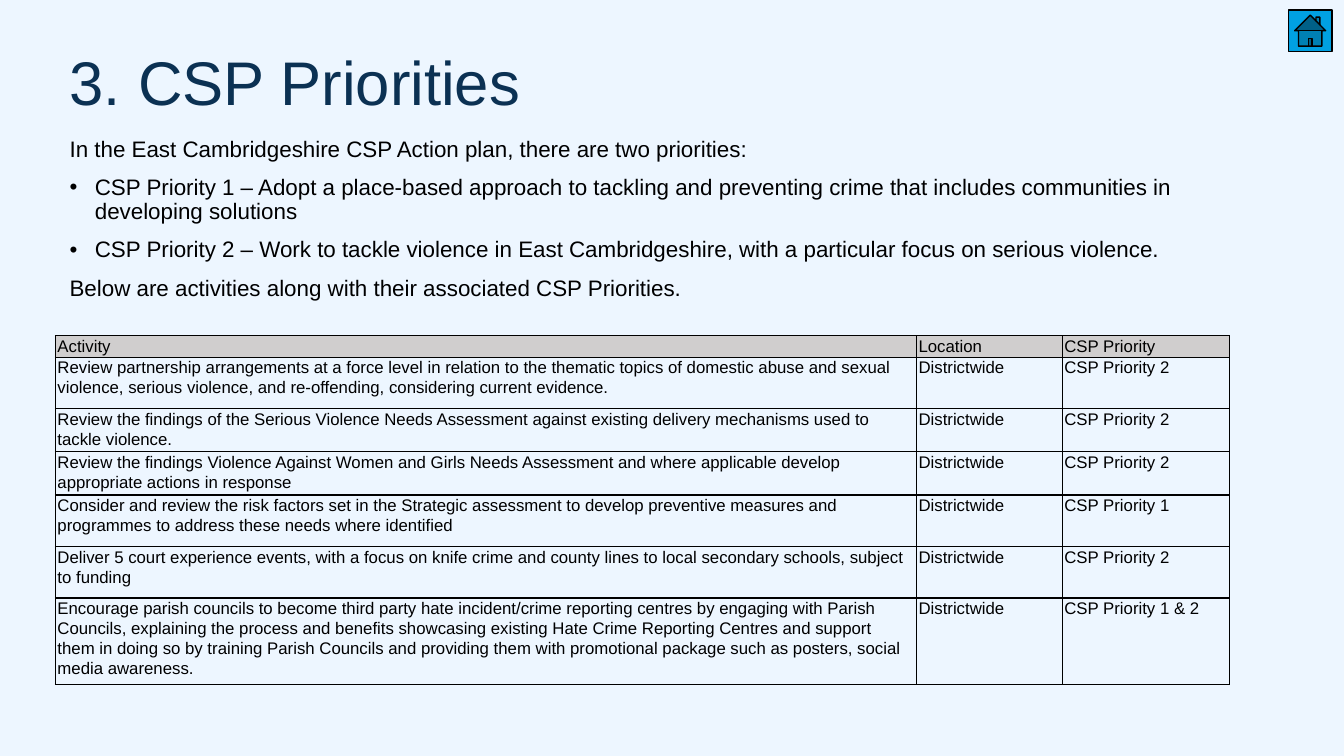
from dataclasses import dataclass

from lxml.etree import SubElement
from pptx import Presentation
from pptx.dml.color import RGBColor
from pptx.enum.shapes import MSO_SHAPE as Preset
from pptx.enum.text import MSO_ANCHOR as Anchor
from pptx.oxml.ns import qn
from pptx.util import Emu, Inches, Pt

FONT = "Arial"
INK, NAVY, PALE, SKY, GREY = "000000", "0B3153", "EDF6FF", "00A0E2", "D0CECE"
SLIDE_W, SLIDE_H = Inches(13.33), Inches(7.5)
LINE_SHARE, SPARE_SHARE = 2.67, 1.47
COLUMN_SHARES = (64.07, 10.85, 12.45)


@dataclass(frozen=True)
class Area:
    left: float
    top: float
    width: float
    height: float

    def box(self) -> tuple[Emu, Emu, Emu, Emu]:
        return across(self.left), down(self.top), across(self.width), down(self.height)


@dataclass(frozen=True)
class Statement:
    text: str
    bulleted: bool = False


@dataclass(frozen=True)
class Activity:
    name: str
    location: str
    priority: str
    lines: int = 2
    spare: bool = False
    fill: str | None = None

    def height(self) -> Emu:
        return down(self.lines * LINE_SHARE + self.spare * SPARE_SHARE)


TITLE_AREA = Area(5.18, 6.93, 86.27, 17.73)
HOME_AREA = Area(95.87, 1.33, 3.23, 5.47)
INTRO_AREA = Area(5.18, 18.27, 86.27, 23.47)
TABLE_AREA = Area(4.13, 44.4, sum(COLUMN_SHARES), 44.4)

TITLE = [Statement("3. CSP Priorities")]
INTRO = [
    Statement("In the East Cambridgeshire CSP Action plan, there are two priorities:"),
    Statement("CSP Priority 1 – Adopt a place-based approach to tackling and preventing crime "
              "that includes communities in developing solutions", True),
    Statement("CSP Priority 2 – Work to tackle violence in East Cambridgeshire, "
              "with a particular focus on serious violence.", True),
    Statement("Below are activities along with their associated CSP Priorities."),
]
ACTIVITIES = [
    Activity("Activity", "Location", "CSP Priority", lines=1, fill=GREY),
    Activity("Review partnership arrangements at a force level in relation to the thematic topics of "
             "domestic abuse and sexual violence, serious violence, and re-offending, "
             "considering current evidence.", "Districtwide", "CSP Priority 2", spare=True),
    Activity("Review the findings of the Serious Violence Needs Assessment against existing "
             "delivery mechanisms used to tackle violence.", "Districtwide", "CSP Priority 2"),
    Activity("Review the findings Violence Against Women and Girls Needs Assessment and where "
             "applicable develop appropriate actions in response", "Districtwide", "CSP Priority 2"),
    Activity("Consider and review the risk factors set in the Strategic assessment to develop "
             "preventive measures and programmes to address these needs where identified",
             "Districtwide", "CSP Priority 1", spare=True),
    Activity("Deliver 5 court experience events, with a focus on knife crime and county lines to "
             "local secondary schools, subject to funding", "Districtwide", "CSP Priority 2", spare=True),
    Activity("Encourage parish councils to become third party hate incident/crime reporting centres "
             "by engaging with Parish Councils, explaining the process and benefits showcasing "
             "existing Hate Crime Reporting Centres and support them in doing so by training Parish "
             "Councils and providing them with promotional package such as posters, social media "
             "awareness.", "Districtwide", "CSP Priority 1 & 2", lines=4),
]


def across(share: float) -> Emu:
    return Emu(round(SLIDE_W * share / 100))


def down(share: float) -> Emu:
    return Emu(round(SLIDE_H * share / 100))


def paint(fill, color: str) -> None:
    fill.solid()
    fill.fore_color.rgb = RGBColor.from_string(color)


def write(paragraph, text: str, size: float, color: str, spacing: float) -> None:
    paragraph.text = text
    paragraph.line_spacing = spacing
    for run in paragraph.runs:
        run.font.name = FONT
        run.font.size = Pt(size)
        run.font.color.rgb = RGBColor.from_string(color)


def add_bullet(paragraph) -> None:
    props = paragraph._p.get_or_add_pPr()
    props.set("marL", str(Inches(0.25)))
    props.set("indent", str(-Inches(0.25)))
    SubElement(props, qn("a:buFont"), typeface=FONT)
    SubElement(props, qn("a:buChar"), char="•")


def add_statements(slide, area: Area, statements: list[Statement], size: float, color: str) -> None:
    frame = slide.shapes.add_textbox(*area.box()).text_frame
    frame.word_wrap = True
    frame.vertical_anchor = Anchor.TOP
    frame.margin_left = frame.margin_right = frame.margin_top = frame.margin_bottom = 0
    for index, statement in enumerate(statements):
        paragraph = frame.add_paragraph() if index else frame.paragraphs[0]
        if statement.bulleted:
            add_bullet(paragraph)
        write(paragraph, statement.text, size, color, 0.9)
        if index:
            paragraph.space_before = Pt(10)


def add_home_button(slide) -> None:
    home = slide.shapes.add_shape(Preset.ACTION_BUTTON_HOME, *HOME_AREA.box())
    home.shadow.inherit = False
    paint(home.fill, SKY)
    paint(home.line.fill, INK)
    home.line.width = Pt(1)


def add_borders(cell) -> None:
    props = cell._tc.get_or_add_tcPr()
    for side in ("lnL", "lnR", "lnT", "lnB"):
        border = SubElement(props, qn(f"a:{side}"), w=str(Pt(1)))
        SubElement(SubElement(border, qn("a:solidFill")), qn("a:srgbClr"), val=INK)


def fill_cell(cell, text: str, fill: str | None) -> None:
    cell.margin_left = cell.margin_right = Inches(0.02)
    cell.margin_top = cell.margin_bottom = 0
    cell.vertical_anchor = Anchor.TOP
    paragraph = cell.text_frame.paragraphs[0]
    write(paragraph, text, 12, INK, 1.07)
    paragraph.space_after = Pt(8)
    add_borders(cell)
    if fill:
        paint(cell.fill, fill)
    else:
        cell.fill.background()


def add_activities(slide) -> None:
    table = slide.shapes.add_table(len(ACTIVITIES), len(COLUMN_SHARES), *TABLE_AREA.box()).table
    table.first_row = table.horz_banding = False
    for column, share in zip(table.columns, COLUMN_SHARES):
        column.width = across(share)
    for row, activity in zip(table.rows, ACTIVITIES):
        row.height = activity.height()
        for cell, text in zip(row.cells, (activity.name, activity.location, activity.priority)):
            fill_cell(cell, text, activity.fill)


def main() -> None:
    deck = Presentation()
    deck.slide_width, deck.slide_height = SLIDE_W, SLIDE_H
    slide = deck.slides.add_slide(deck.slide_layouts[6])
    paint(slide.background.fill, PALE)
    add_statements(slide, TITLE_AREA, TITLE, 44, NAVY)
    add_home_button(slide)
    add_statements(slide, INTRO_AREA, INTRO, 16, INK)
    add_activities(slide)
    deck.save("out.pptx")


if __name__ == "__main__":
    main()
